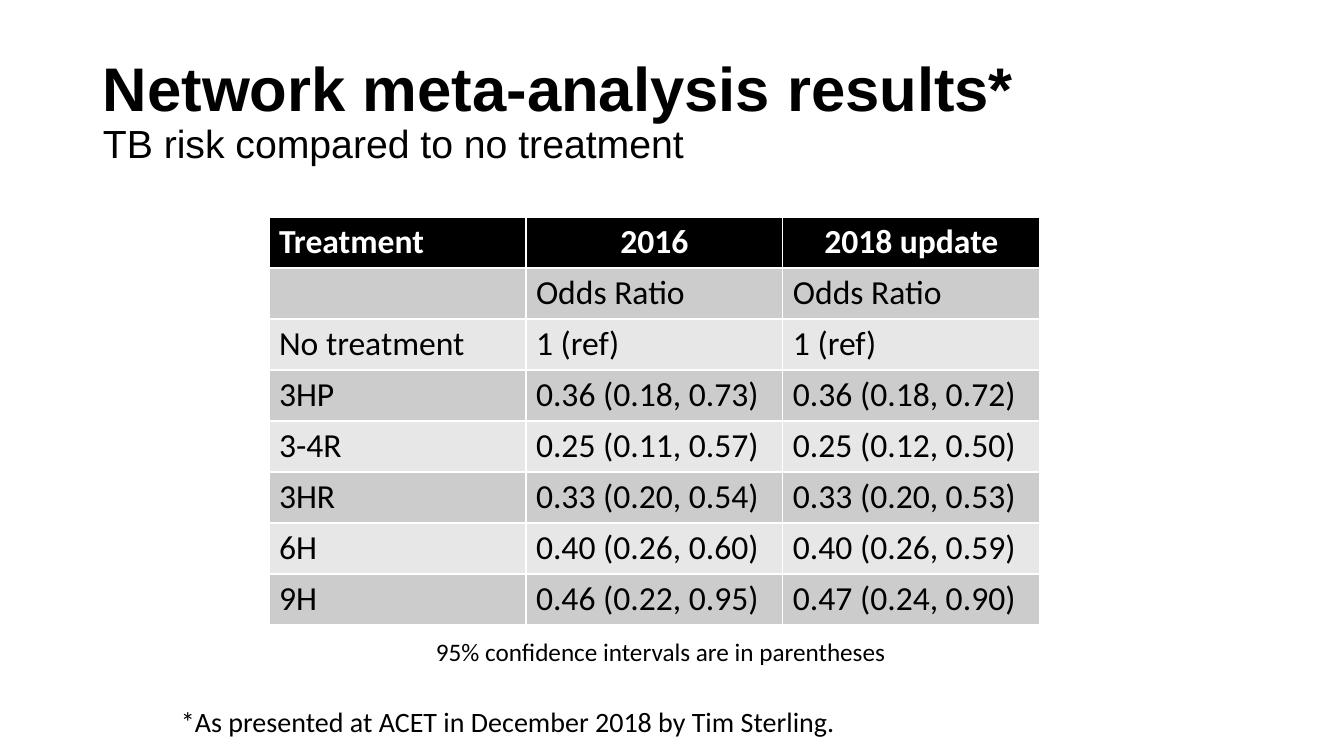
from pptx import Presentation
from pptx.dml.color import RGBColor
from pptx.enum.text import MSO_ANCHOR as Anchor, PP_ALIGN as Align
from pptx.util import Pt

PX = 914400 / 100.8
BLACK = RGBColor(0x00, 0x00, 0x00)
WHITE = RGBColor(0xFF, 0xFF, 0xFF)
DARK = RGBColor(0xCC, 0xCC, 0xCC)
LIGHT = RGBColor(0xE7, 0xE7, 0xE7)


def px(*sizes):
    return [round(size * PX) for size in sizes]


def add_run(para, text, size, font="Calibri", color=BLACK, bold=False):
    run = para.add_run()
    run.text = text
    run.font.size = Pt(size)
    run.font.name = font
    run.font.color.rgb = color
    run.font.bold = bold


deck = Presentation()
deck.slide_width, deck.slide_height = px(1344, 756)
slide = deck.slides.add_slide(deck.slide_layouts[6])

# Title and subtitle
title = slide.shapes.add_textbox(*px(93, 40, 1159, 146)).text_frame
title.word_wrap = True
title.vertical_anchor = Anchor.MIDDLE
para = title.paragraphs[0]
para.line_spacing = 0.9
add_run(para, "Network meta-analysis results*", 44, "Arial", bold=True)
para.add_line_break()
add_run(para, "TB risk compared to no treatment", 28, "Arial")

# Odds ratios
rows = [
    ("Treatment", "2016", "2018 update"),
    ("", "Odds Ratio", "Odds Ratio"),
    ("No treatment", "1 (ref)", "1 (ref)"),
    ("3HP", "0.36 (0.18, 0.73)", "0.36 (0.18, 0.72)"),
    ("3-4R", "0.25 (0.11, 0.57)", "0.25 (0.12, 0.50)"),
    ("3HR", "0.33 (0.20, 0.54)", "0.33 (0.20, 0.53)"),
    ("6H", "0.40 (0.26, 0.60)", "0.40 (0.26, 0.59)"),
    ("9H", "0.46 (0.22, 0.95)", "0.47 (0.24, 0.90)"),
]
frame = slide.shapes.add_table(len(rows), 3, *px(269, 217, 3 * 257, len(rows) * 51))
table = frame.table
for r, row in enumerate(rows):
    head = r == 0
    for c, text in enumerate(row):
        cell = table.cell(r, c)
        cell.fill.solid()
        cell.fill.fore_color.rgb = BLACK if head else DARK if r % 2 else LIGHT
        para = cell.text_frame.paragraphs[0]
        if head and c:
            para.alignment = Align.CENTER
        if text:
            add_run(para, text, 24, color=WHITE if head else BLACK, bold=head)

# Notes below the table
notes = [
    ("95% confidence intervals are in parentheses", 18, (426, 631, 535, 40)),
    ("*As presented at ACET in December 2018 by Tim Sterling.", 20, (171, 700, 681, 56)),
]
for text, size, box in notes:
    note = slide.shapes.add_textbox(*px(*box)).text_frame
    note.word_wrap = True
    add_run(note.paragraphs[0], text, size)

deck.save("out.pptx")
